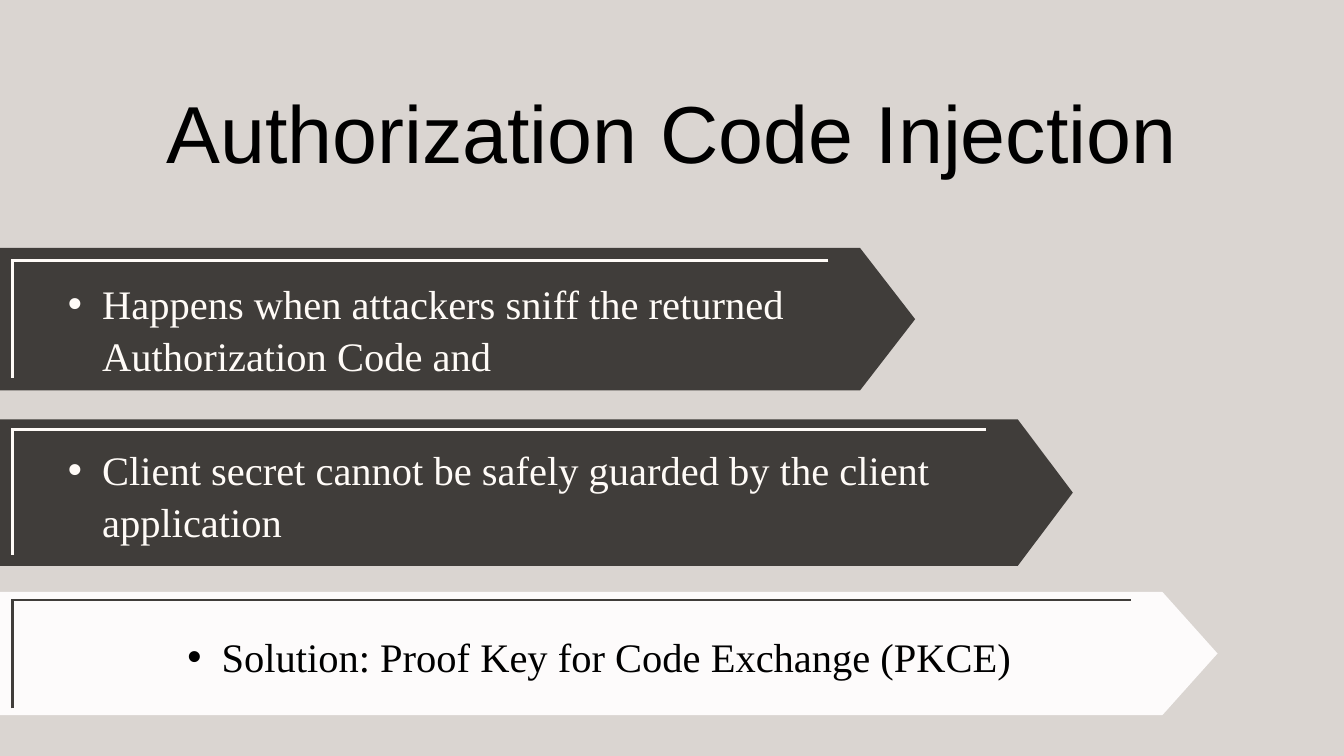
from dataclasses import dataclass

from lxml import etree
from pptx import Presentation
from pptx.dml.color import RGBColor
from pptx.enum import shapes, text
from pptx.oxml import ns
from pptx.util import Pt


@dataclass(frozen=True)
class Theme:
    background: str = "DAD5D1"
    dark: str = "403D3A"
    light: str = "FDFBFB"
    cream: str = "FFFBF7"
    black: str = "000000"
    title_font: str = "Arial"
    body_font: str = "Times New Roman"
    title_size: float = 86.6
    body_size: float = 43.4
    body_leading: float = 56
    rule_weight: float = 3


THEME = Theme()
BAND_LEFT, TIP_DEPTH = -60, 59
RULE_LEFT, RULE_GAP = 13, 93
TEXT_LEFT, TEXT_INDENT = 36, 36.72

BANDS = [
    dict(box=(265.7, 1040.5, 152.6), fill=THEME.dark, ink=THEME.cream, rule=THEME.cream,
         insets=(13.7, 13.7), wording_box=(29.5, 1018, 165.6), align=text.PP_ALIGN.LEFT,
         wording="Happens when attackers sniff the returned Authorization Code and"),
    dict(box=(449.3, 1209.5, 157), fill=THEME.dark, ink=THEME.cream, rule=THEME.cream,
         insets=(10.5, 12), wording_box=(23.8, 1040.4, 165.6), align=text.PP_ALIGN.LEFT,
         wording="Client secret cannot be safely guarded by the client application"),
    dict(box=(634.3, 1364.5, 131.8), fill=THEME.light, ink=THEME.black, rule=THEME.dark,
         insets=(8.6, 7.2), wording_box=(38.9, 1176.5, 110.2), align=text.PP_ALIGN.CENTER,
         wording="Solution: Proof Key for Code Exchange (PKCE)"),
]


def apply(target, formats):
    for name, value in formats.items():
        setattr(target, name, value)


def write(frame, wording, font, size, leading, ink, align):
    apply(frame, dict(margin_left=0, margin_top=0, margin_right=0, margin_bottom=0,
                      word_wrap=True, auto_size=text.MSO_AUTO_SIZE.NONE,
                      vertical_anchor=text.MSO_ANCHOR.TOP))
    paragraph = frame.paragraphs[0]
    apply(paragraph, dict(alignment=align, line_spacing=Pt(leading),
                          space_before=Pt(0), space_after=Pt(0)))
    run = paragraph.add_run()
    run.text = wording
    apply(run.font, dict(name=font, size=Pt(size)))
    run.font.color.rgb = RGBColor.from_string(ink)
    return paragraph


def add_bullet(paragraph):
    paragraph.level = 1
    properties = paragraph._p.get_or_add_pPr()
    properties.set("marL", str(Pt(2 * TEXT_INDENT)))
    properties.set("indent", str(-Pt(TEXT_INDENT)))
    etree.SubElement(properties, ns.qn("a:buFont"), typeface="Arial")
    etree.SubElement(properties, ns.qn("a:buChar"), char="•")


def add_rule(slide, start, end, colour):
    rule = slide.shapes.add_connector(
        shapes.MSO_CONNECTOR.STRAIGHT, *(Pt(length) for length in start + end))
    rule.line.width = Pt(THEME.rule_weight)
    rule.line.color.rgb = RGBColor.from_string(colour)
    etree.SubElement(rule._element.spPr, ns.qn("a:effectLst"))


def place_title(slide, left, top, width, height):
    title = slide.shapes.title
    apply(title, dict(left=Pt(left), top=Pt(top), width=Pt(width), height=Pt(height)))
    write(title.text_frame, "Authorization Code Injection", THEME.title_font,
          THEME.title_size, THEME.title_size, THEME.black, text.PP_ALIGN.CENTER)


def place_band(slide, box, fill, ink, rule, insets, wording_box, align, wording):
    top, width, height = box
    arrow = slide.shapes.add_shape(
        shapes.MSO_SHAPE.CHEVRON, Pt(BAND_LEFT), Pt(top), Pt(width), Pt(height))
    arrow.adjustments[0] = TIP_DEPTH / height
    arrow.fill.solid()
    arrow.fill.fore_color.rgb = RGBColor.from_string(fill)
    arrow.line.fill.background()
    arrow.shadow.inherit = False

    text_offset, text_width, text_height = wording_box
    label = slide.shapes.add_textbox(
        Pt(TEXT_LEFT), Pt(top + text_offset), Pt(text_width), Pt(text_height))
    add_bullet(write(label.text_frame, wording, THEME.body_font, THEME.body_size,
                     THEME.body_leading, ink, align))

    rule_top, rule_bottom = top + insets[0], top + height - insets[1]
    corner = (RULE_LEFT, rule_top)
    add_rule(slide, (RULE_LEFT, rule_bottom),
             (RULE_LEFT, rule_top - THEME.rule_weight / 2), rule)
    add_rule(slide, (BAND_LEFT + width - RULE_GAP, rule_top), corner, rule)


def main():
    deck = Presentation()
    apply(deck, dict(slide_width=Pt(1440), slide_height=Pt(810)))
    slide = deck.slides.add_slide(deck.slide_layouts.get_by_name("Title Only"))
    slide.background.fill.solid()
    slide.background.fill.fore_color.rgb = RGBColor.from_string(THEME.background)
    place_title(slide, 54.7, 105.8, 1330.6, 91.4)
    for band in BANDS:
        place_band(slide, **band)
    deck.save("out.pptx")


if __name__ == "__main__":
    main()
